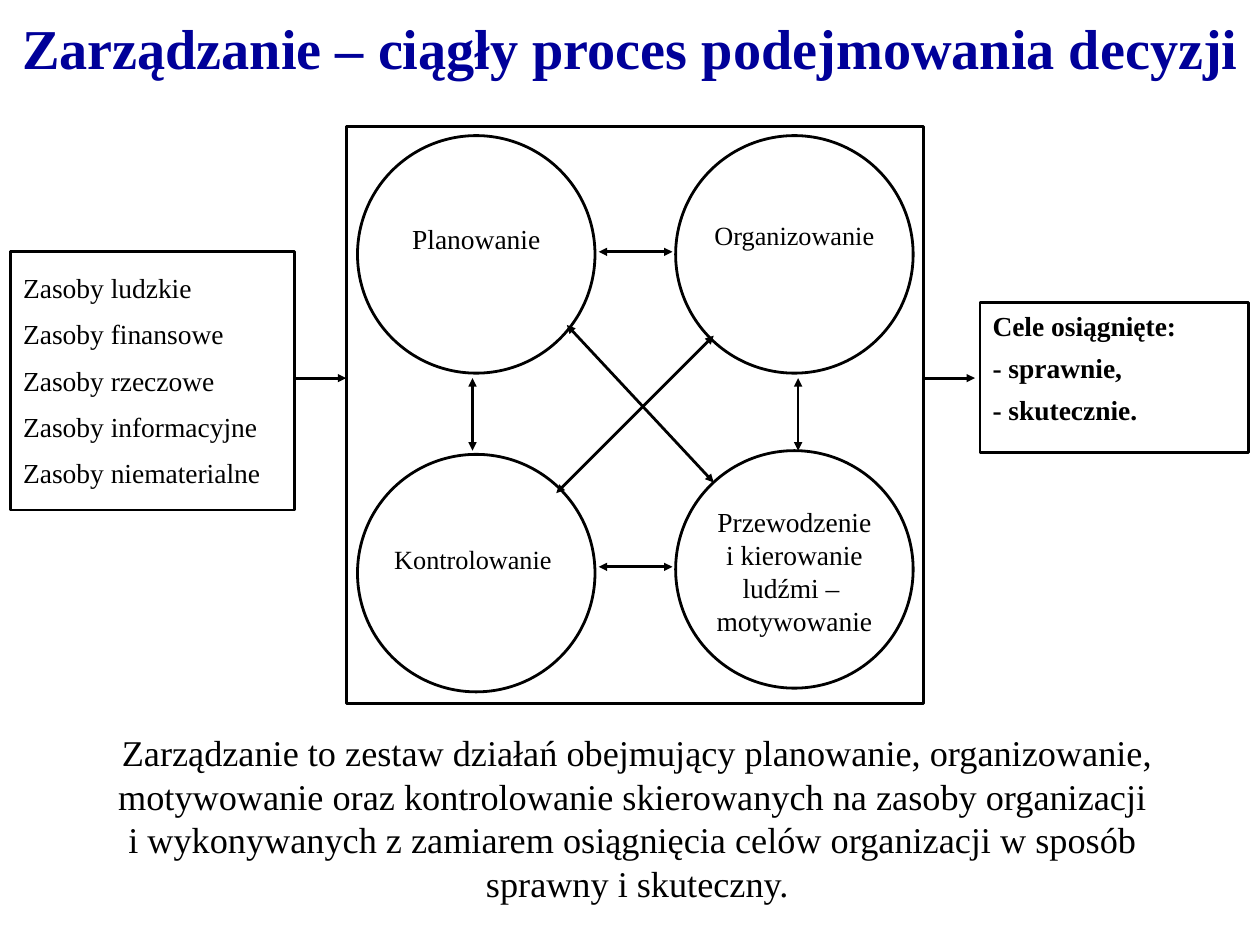
from pptx import Presentation
from pptx.dml.color import RGBColor
from pptx.enum.shapes import MSO_CONNECTOR as CONNECTOR, MSO_SHAPE as SHAPE
from pptx.enum.text import MSO_ANCHOR as ANCHOR, PP_ALIGN as ALIGN
from pptx.oxml.ns import qn
from pptx.util import Pt
from lxml import etree

NAVY = RGBColor(0x00, 0x00, 0x99)
BLACK = RGBColor(0x00, 0x00, 0x00)
WHITE = RGBColor(0xFF, 0xFF, 0xFF)
FONT = "Times New Roman"


def write(frame, text, size, align, margins, color=BLACK, bold=False):
    """Fill a text frame; margins are left, top, right, bottom in points."""
    frame.margin_left, frame.margin_top, frame.margin_right, frame.margin_bottom = map(Pt, margins)
    frame.word_wrap = True
    frame.vertical_anchor = ANCHOR.TOP
    frame.text = text
    for paragraph in frame.paragraphs:
        paragraph.alignment = align
        for run in paragraph.runs:
            run.font.name = FONT
            run.font.size = Pt(size)
            run.font.bold = bold
            run.font.color.rgb = color


def add_outlined(kind, left, top, width, height):
    shape = slide.shapes.add_shape(kind, Pt(left), Pt(top), Pt(width), Pt(height))
    shape.shadow.inherit = False
    shape.fill.solid()
    shape.fill.fore_color.rgb = WHITE
    shape.line.color.rgb = BLACK
    shape.line.width = Pt(2.25)
    return shape


prs = Presentation()
prs.slide_width, prs.slide_height = Pt(1008), Pt(756)
slide = prs.slides.add_slide(prs.slide_layouts[5])
box_margins = (10, 5, 10, 5)

# Title
title = slide.shapes.title
title.left, title.top, title.width, title.height = Pt(0), Pt(8.5), Pt(1008), Pt(59)
write(title.text_frame, "Zarządzanie – ciągły proces podejmowania decyzji", 45,
      ALIGN.CENTER, box_margins, NAVY, True)
title.text_frame.vertical_anchor = ANCHOR.MIDDLE

# Resources going in
resources = add_outlined(SHAPE.RECTANGLE, 8.5, 201.5, 227, 206.5).text_frame
kinds = ["ludzkie", "finansowe", "rzeczowe", "informacyjne", "niematerialne"]
write(resources, "\n".join(f"Zasoby {kind}" for kind in kinds), 22, ALIGN.LEFT, box_margins)
for paragraph in resources.paragraphs:
    paragraph.line_spacing = 1.4

# Goals coming out
goals = add_outlined(SHAPE.RECTANGLE, 784, 242, 215, 120).text_frame
write(goals, "Cele osiągnięte:\n- sprawnie,\n- skutecznie.", 22, ALIGN.LEFT, box_margins, bold=True)
for paragraph in goals.paragraphs:
    paragraph.space_after = Pt(7.5)

# Four management functions: left, top, text, size, space above the text
add_outlined(SHAPE.RECTANGLE, 277, 101, 462, 462)
functions = [
    (286, 108.5, "Planowanie", 22, 41.5),
    (540.5, 108.5, "Organizowanie", 21, 39),
    (540.5, 360.5, "Przewodzenie i kierowanie ludźmi – \nmotywowanie", 22, 16),
    (286, 363.5, "Kontrolowanie ", 21, 43.5),
]
for left, top, text, size, space_above in functions:
    circle = add_outlined(SHAPE.OVAL, left, top, 190, 190)
    write(circle.text_frame, text, size, ALIGN.CENTER, (0, space_above, 0, 0))

# Arrows: start x, start y, end x, end y, arrowheads
one_way, two_way = ["a:tailEnd"], ["a:headEnd", "a:tailEnd"]
arrows = [
    (235.5, 302.5, 277, 302.5, one_way),
    (739, 302.5, 780, 302.5, one_way),
    (479, 201.5, 538, 201.5, two_way),
    (479, 453.5, 538, 453.5, two_way),
    (378, 360.5, 378, 302.5, two_way),
    (638.5, 360.5, 638.5, 302.5, two_way),
    (445, 394.5, 571, 268.5, two_way),
    (571, 386, 453.5, 260, two_way),
]
for start_x, start_y, end_x, end_y, heads in arrows:
    arrow = slide.shapes.add_connector(CONNECTOR.STRAIGHT, Pt(start_x), Pt(start_y), Pt(end_x), Pt(end_y))
    arrow.line.color.rgb = BLACK
    arrow.line.width = Pt(2.25)
    for head in heads:
        etree.SubElement(arrow.line._get_or_add_ln(), qn(head), type="triangle")
    etree.SubElement(arrow._element.spPr, qn("a:effectLst"))

# Definition
definition = slide.shapes.add_textbox(Pt(76), Pt(579.5), Pt(868), Pt(152.5)).text_frame
write(definition,
      "Zarządzanie to zestaw działań obejmujący planowanie, organizowanie,\v"
      "motywowanie oraz kontrolowanie skierowanych na zasoby organizacji \v"
      "i wykonywanych z zamiarem osiągnięcia celów organizacji w sposób \v"
      "sprawny i skuteczny.", 29, ALIGN.CENTER, box_margins)
definition.word_wrap = False

prs.save("out.pptx")
